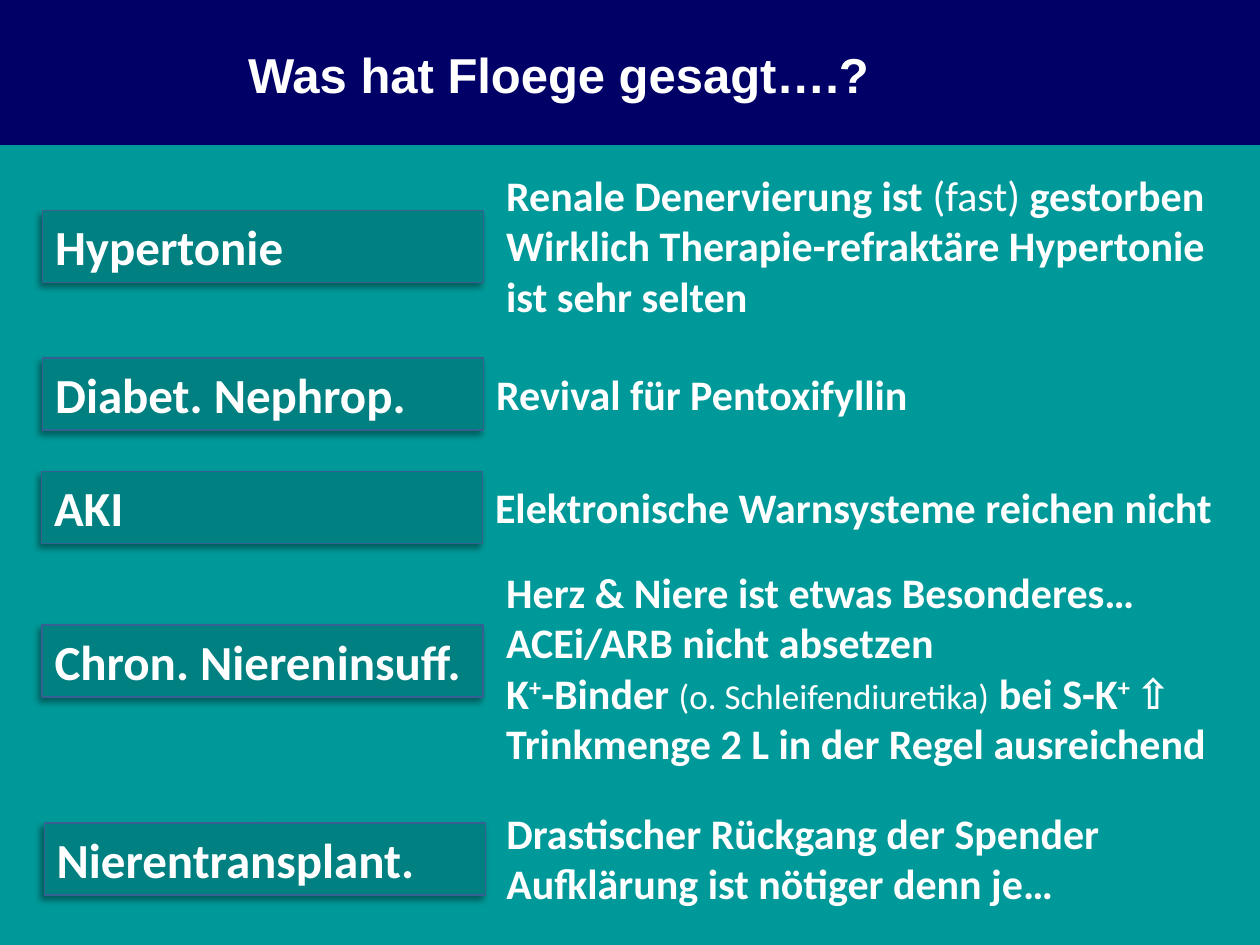
import pptx
import pptx.dml.color
import pptx.enum.shapes
import pptx.enum.text
import pptx.oxml
import pptx.oxml.ns
import pptx.util

Pt = pptx.util.Pt
RECTANGLE = pptx.enum.shapes.MSO_SHAPE.RECTANGLE
MIDDLE = pptx.enum.text.MSO_ANCHOR.MIDDLE
LEFT = pptx.enum.text.PP_ALIGN.LEFT

COLORS = {
    "background": "009999",
    "banner": "000066",
    "label": "008080",
    "border": "376092",
    "text": "FFFFFF",
    "shadow": "000000",
}
LABEL_WIDTH, LABEL_HEIGHT = 252, 41.2
LINE_HEIGHT, PADDING = 29.3, 7.2

LIGHT = {"bold": False}
RAISED = {"baseline": 30}

SECTIONS = [
    {"label": "Hypertonie", "left": 24.4, "top": 120.2, "gap": 5.8, "width": 438, "lines": 3,
     "notes": [
         [("Renale Denervierung ist", {}), (" (fast) ", LIGHT), ("gestorben", {})],
         [("Wirklich Therapie-refraktäre Hypertonie ist sehr selten", {})],
     ]},
    {"label": "Diabet. Nephrop.", "left": 24.5, "top": 204.5, "width": 429,
     "notes": [[("Revival für Pentoxifyllin", {})]]},
    {"label": "AKI", "left": 23.8, "top": 269.3, "width": 429,
     "notes": [[("Elektronische Warnsysteme reichen nicht", {})]]},
    {"label": "Chron. Niereninsuff.", "left": 24.1, "top": 357.1, "gap": 6.1, "width": 438, "drop": 4.7,
     "notes": [
         [("Herz & Niere ist etwas Besonderes…", {})],
         [("ACEi/ARB nicht absetzen", {})],
         [("K", {}), ("+", RAISED), ("-Binder ", {}),
          ("(o. Schleifendiuretika)", {"size": 20, "bold": False}), (" ", LIGHT),
          ("bei S-K", {}), ("+ ", RAISED), ("⇧", {})],
         [("Trinkmenge 2 L in der Regel ausreichend", {})],
     ]},
    {"label": "Nierentransplant.", "left": 25.3, "top": 470.2, "gap": 5, "width": 357,
     "notes": [
         [("Drastischer Rückgang der Spender", {})],
         [("Aufklärung ist nötiger denn je…", {})],
     ]},
]


def color(name):
    return pptx.dml.color.RGBColor.from_string(COLORS[name])


def add_shadow(properties, blur, distance, direction, alpha):
    properties.append(pptx.oxml.parse_xml(
        f'<a:effectLst {pptx.oxml.ns.nsdecls("a")}>'
        f'<a:outerShdw blurRad="{Pt(blur)}" dist="{Pt(distance)}" dir="{direction * 60000}"'
        f' algn="tl" rotWithShape="0"><a:srgbClr val="{COLORS["shadow"]}">'
        f'<a:alpha val="{alpha * 1000}"/></a:srgbClr></a:outerShdw></a:effectLst>'))


def add_text(paragraph, text, size=24, font="Calibri", bold=True, baseline=0):
    paragraph.alignment = LEFT
    run = paragraph.add_run()
    run.text = text
    run.font.size = Pt(size)
    run.font.name = font
    run.font.bold = bold
    run.font.color.rgb = color("text")
    if baseline:
        run.font._element.set("baseline", str(baseline * 1000))
    return run


def add_box(shapes, left, top, width, height, fill):
    shape = shapes.add_shape(RECTANGLE, Pt(left), Pt(top), Pt(width), Pt(height))
    shape.shadow.inherit = False
    shape.fill.solid()
    shape.fill.fore_color.rgb = color(fill)
    shape.line.fill.background()
    return shape


def add_banner(slide, left, top, width, height):
    banner = add_box(slide.shapes, left, top, width, height, "banner")
    title = slide.shapes.title
    title.element.addprevious(banner.element)
    title.left, title.top = Pt(left + 134.6), Pt(top + 21.6)
    title.width, title.height = Pt(373.7), Pt(41.2)
    frame = title.text_frame
    frame.word_wrap = False
    frame.auto_size = pptx.enum.text.MSO_AUTO_SIZE.NONE
    frame.vertical_anchor = MIDDLE
    run = add_text(frame.paragraphs[0], "Was hat Floege gesagt….?", size=28, font="Arial")
    effects_parent = run.font._element
    add_shadow(effects_parent, 2, 2, 45, 100)
    effects_parent.find(pptx.oxml.ns.qn("a:latin")).addprevious(effects_parent[-1])


def add_label(shapes, text, left, top):
    label = add_box(shapes, left, top, LABEL_WIDTH, LABEL_HEIGHT, "label")
    label.line.color.rgb = color("border")
    label.line.width = Pt(0.75)
    properties = label.element.spPr
    properties.remove(properties.find(pptx.oxml.ns.qn("a:effectLst")))
    add_shadow(properties, 4, 3, 135, 40)
    label.text_frame.word_wrap = True
    label.text_frame.vertical_anchor = MIDDLE
    add_text(label.text_frame.paragraphs[0], text, size=28)


def add_section(slide, label, left, top, width, notes, gap=0, lines=None, drop=0):
    shapes = slide.shapes.add_group_shape().shapes
    add_label(shapes, label, left, top)
    height = (lines or len(notes)) * LINE_HEIGHT + PADDING
    notes_top = top + (LABEL_HEIGHT - height) / 2 + drop
    box = shapes.add_textbox(Pt(left + LABEL_WIDTH + gap), Pt(notes_top), Pt(width), Pt(height))
    frame = box.text_frame
    frame.word_wrap = True
    for index, runs in enumerate(notes):
        paragraph = frame.add_paragraph() if index else frame.paragraphs[0]
        for text, style in runs:
            add_text(paragraph, text, **style)


def main():
    presentation = pptx.Presentation()
    presentation.slide_width, presentation.slide_height = Pt(720), Pt(540)
    slide = presentation.slides.add_slide(presentation.slide_layouts[5])
    slide.background.fill.solid()
    slide.background.fill.fore_color.rgb = color("background")
    add_banner(slide, 0, 0, 720, 82.8)
    for section in SECTIONS:
        add_section(slide, **section)
    presentation.save("out.pptx")


if __name__ == "__main__":
    main()
